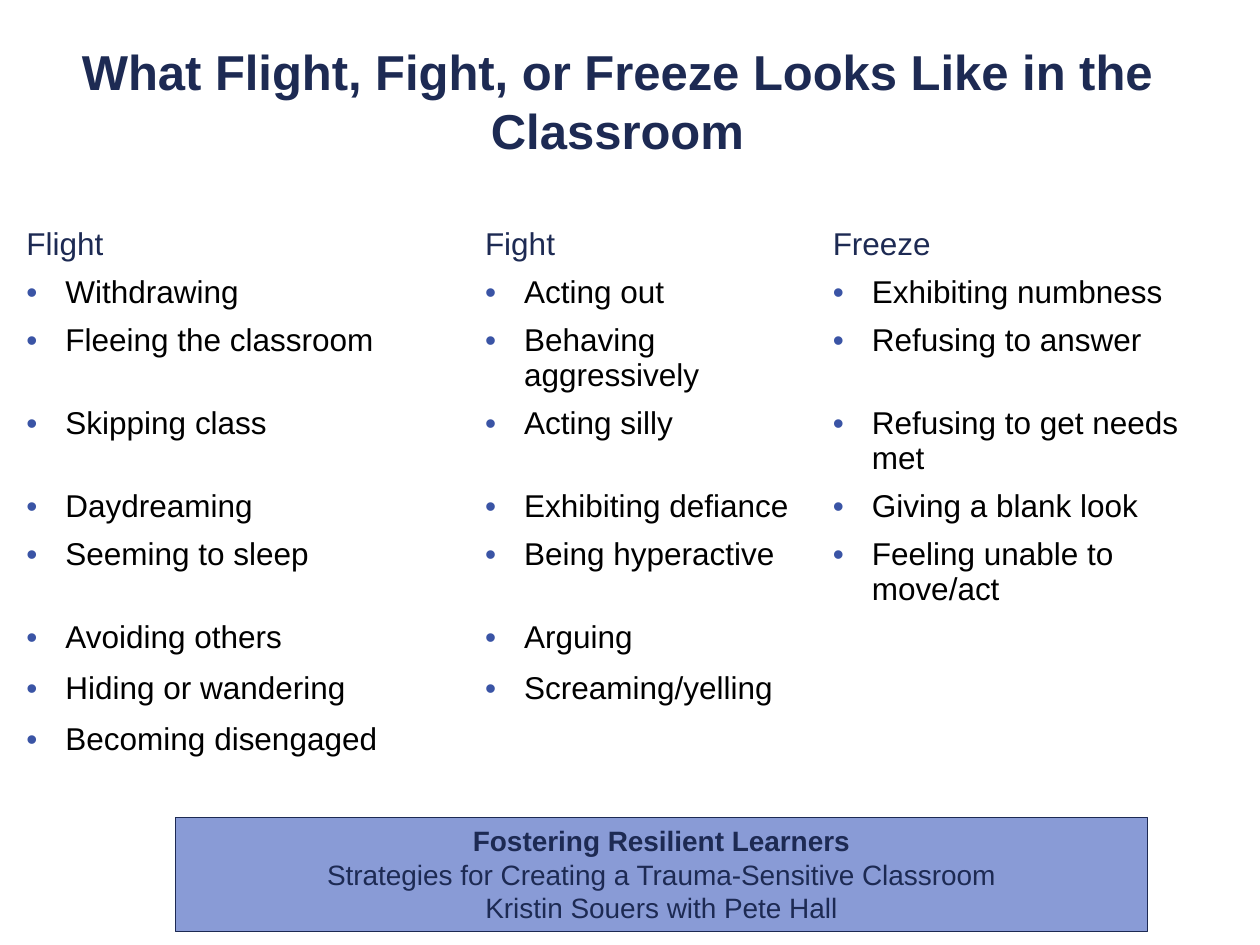
from itertools import zip_longest

from lxml import etree
from pptx import Presentation
from pptx import util as u
from pptx.dml.color import RGBColor
from pptx.enum import shapes, text
from pptx.oxml import ns

WIDTH, HEIGHT = u.Inches(10), u.Inches(7.5)
NAVY = RGBColor(0x1D, 0x2A, 0x53)
BLUE = RGBColor(0x3A, 0x54, 0xA5)
PERIWINKLE = RGBColor(0x89, 0x9B, 0xD6)
BLACK = RGBColor(0, 0, 0)

TITLE_FORMAT = {"size": u.Pt(28), "bold": True}
HEADING_FORMAT = {"size": u.Pt(18)}
BEHAVIOR_FORMAT = {"size": u.Pt(18), "color": BLACK}
BOOK_FORMAT = {"size": u.Pt(16)}

COLUMN_WIDTHS = (3.64, 2.76, 3.36)
ROW_COUNT = 12
ROW_HEIGHT = 0.35
RESPONSES = {
    "Flight": ["Withdrawing", "Fleeing the classroom", "Skipping class",
               "Daydreaming", "Seeming to sleep", "Avoiding others",
               "Hiding or wandering", "Becoming disengaged"],
    "Fight": ["Acting out", "Behaving aggressively", "Acting silly",
              "Exhibiting defiance", "Being hyperactive", "Arguing",
              "Screaming/yelling"],
    "Freeze": ["Exhibiting numbness", "Refusing to answer",
               "Refusing to get needs met", "Giving a blank look",
               "Feeling unable to move/act"],
}
BOOK = ["Fostering Resilient Learners",
        "Strategies for Creating a Trauma-Sensitive Classroom",
        "Kristin Souers with Pete Hall"]


def area(left, top, width, height):
    return (int(WIDTH * left), int(HEIGHT * top),
            int(WIDTH * width), int(HEIGHT * height))


def write(paragraph, wording, style):
    run = paragraph.add_run()
    run.text = wording
    values = {"name": "Arial", "bold": False, **style}
    run.font.color.rgb = values.pop("color", NAVY)
    for name, value in values.items():
        setattr(run.font, name, value)


def add_bullet(paragraph):
    properties = paragraph._p.get_or_add_pPr()
    indent = u.Inches(0.31)
    properties.set("marL", str(indent))
    properties.set("indent", str(-indent))
    color = etree.SubElement(properties, ns.qn("a:buClr"))
    etree.SubElement(color, ns.qn("a:srgbClr"), val=str(BLUE))
    etree.SubElement(properties, ns.qn("a:buFont"), typeface="Arial")
    etree.SubElement(properties, ns.qn("a:buChar"), char="•")


def add_title(slide, wording):
    title = slide.shapes.add_textbox(*area(0, 0, 0.98, 0.18))
    frame = title.text_frame
    layout = {"word_wrap": True, "margin_top": u.Inches(0.29),
              "vertical_anchor": text.MSO_ANCHOR.MIDDLE}
    for name, value in layout.items():
        setattr(frame, name, value)
    paragraph = frame.paragraphs[0]
    paragraph.alignment = text.PP_ALIGN.CENTER
    write(paragraph, wording, TITLE_FORMAT)


def add_responses(slide):
    left, top = u.Inches(0.11), u.Inches(1.75)
    table = slide.shapes.add_table(
        ROW_COUNT, len(RESPONSES), left, top,
        u.Inches(sum(COLUMN_WIDTHS)), u.Inches(ROW_COUNT * ROW_HEIGHT)).table
    table.first_row = table.horz_banding = False
    for column, width in zip(table.columns, COLUMN_WIDTHS):
        column.width = u.Inches(width)
    for cell in table.iter_cells():
        cell.fill.background()
    for column, heading in enumerate(RESPONSES):
        write(table.cell(0, column).text_frame.paragraphs[0],
              heading, HEADING_FORMAT)
    for row, behaviors in enumerate(zip_longest(*RESPONSES.values()), 1):
        for column, behavior in enumerate(behaviors):
            if behavior:
                paragraph = table.cell(row, column).text_frame.paragraphs[0]
                add_bullet(paragraph)
                write(paragraph, behavior, BEHAVIOR_FORMAT)


def add_book(slide):
    book = slide.shapes.add_shape(shapes.MSO_SHAPE.RECTANGLE,
                                  *area(0.139, 0.865, 0.772, 0.121))
    book.shadow.inherit = False
    book.fill.solid()
    book.fill.fore_color.rgb = PERIWINKLE
    book.line.color.rgb = NAVY
    book.line.width = u.Pt(0.75)
    frame = book.text_frame
    frame.word_wrap = True
    frame.vertical_anchor = text.MSO_ANCHOR.TOP
    for index, line in enumerate(BOOK):
        paragraph = frame.add_paragraph() if index else frame.paragraphs[0]
        paragraph.alignment = text.PP_ALIGN.CENTER
        write(paragraph, line, {**BOOK_FORMAT, "bold": index == 0})


def main():
    deck = Presentation()
    deck.slide_width, deck.slide_height = WIDTH, HEIGHT
    slide = deck.slides.add_slide(deck.slide_layouts[6])
    add_responses(slide)
    add_book(slide)
    add_title(slide, "What Flight, Fight, or Freeze Looks Like in the Classroom")
    deck.save("out.pptx")


if __name__ == "__main__":
    main()
